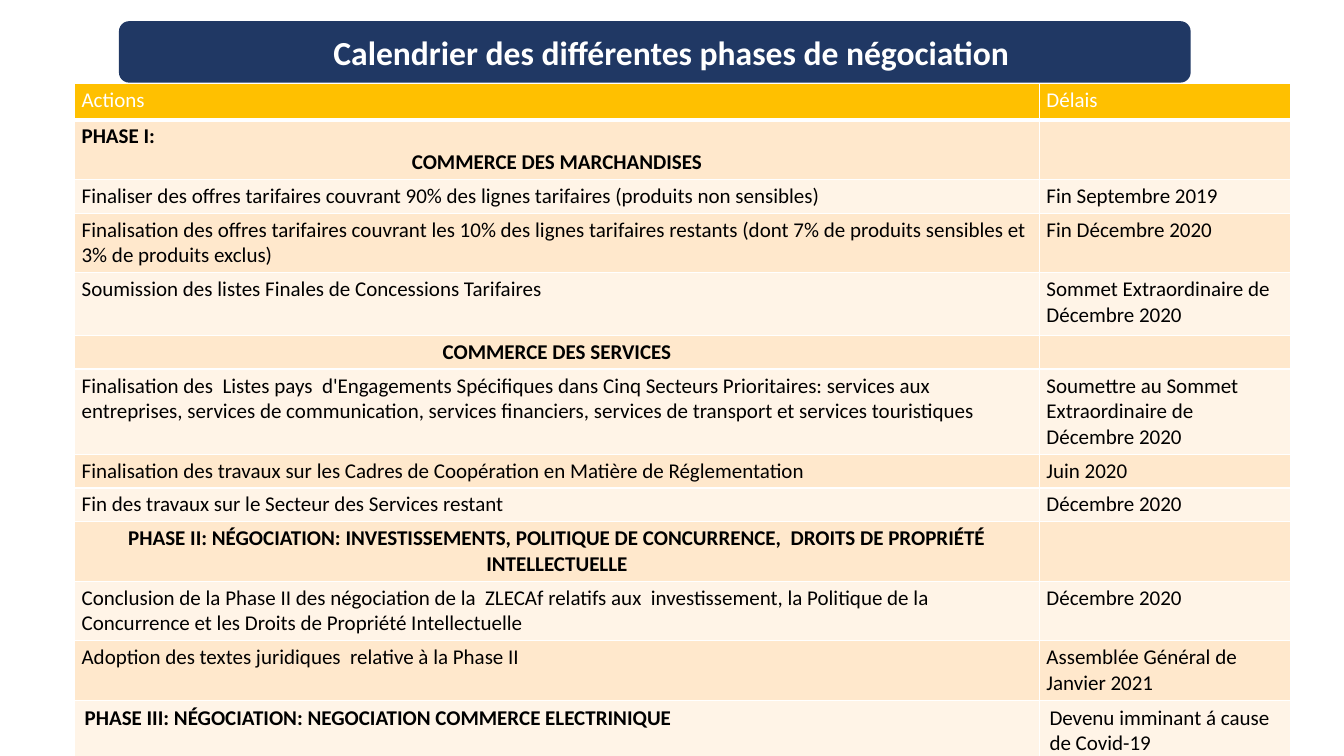
"""Build the slide with the calendar of the negotiation phases."""
from lxml import etree
from pptx import Presentation, util as u
from pptx.dml.color import RGBColor
from pptx.enum import shapes, text
from pptx.oxml import ns

NAVY = RGBColor(0x20, 0x38, 0x64)
GOLD = RGBColor(0xFF, 0xC0, 0x00)
PEACH = RGBColor(0xFF, 0xE8, 0xCC)
CREAM = RGBColor(0xFF, 0xF4, 0xE7)
WHITE = RGBColor(0xFF, 0xFF, 0xFF)
BLACK = RGBColor(0, 0, 0)
LEFT, CENTER = text.PP_ALIGN.LEFT, text.PP_ALIGN.CENTER

HEADING = "Calendrier des différentes phases de négociation"
BANNER_BOX = (8.85, 2.8, 79.74, 8.13)
TABLE_CORNER = (5.55, 11.07)
COLUMN_SHARES = (71.79, 18.68)

CALENDAR = [
    (4.8, "Actions", "Délais"),
    (6.8, "PHASE I:\nCOMMERCE DES MARCHANDISES", ""),
    (4, "Finaliser des offres tarifaires couvrant 90% des lignes tarifaires (produits non sensibles)",
     "Fin Septembre 2019"),
    (6.27, "Finalisation des offres tarifaires couvrant les 10% des lignes tarifaires restants "
     "(dont 7% de produits sensibles et 3% de produits exclus)", "Fin Décembre 2020"),
    (8.27, "Soumission des listes Finales de Concessions Tarifaires",
     "Sommet Extraordinaire de Décembre 2020"),
    (4, "COMMERCE DES SERVICES", ""),
    (10.8, "Finalisation des  Listes pays  d'Engagements Spécifiques dans Cinq Secteurs Prioritaires: "
     "services aux entreprises, services de communication, services financiers, "
     "services de transport et services touristiques",
     "Soumettre au Sommet Extraordinaire de Décembre 2020"),
    (4, "Finalisation des travaux sur les Cadres de Coopération en Matière de Réglementation",
     "Juin 2020"),
    (4, "Fin des travaux sur le Secteur des Services restant", "Décembre 2020"),
    (6.13, "PHASE II: NÉGOCIATION: INVESTISSEMENTS, POLITIQUE DE CONCURRENCE,  "
     "DROITS DE PROPRIÉTÉ INTELLECTUELLE", ""),
    (6.8, "Conclusion de la Phase II des négociation de la  ZLECAf relatifs aux  investissement, "
     "la Politique de la Concurrence et les Droits de Propriété Intellectuelle", "Décembre 2020"),
    (6.27, "Adoption des textes juridiques  relative à la Phase II",
     "Assemblée Général de Janvier 2021"),
    (7.2, "PHASE III: NÉGOCIATION: NEGOCIATION COMMERCE ELECTRINIQUE",
     "Devenu imminant á cause de Covid-19"),
]


def write(paragraph, words, *, font="Calibri", size=15, color=BLACK, bold=False, align=LEFT):
    """Write words into a paragraph, or set its size when there are none."""
    paragraph.alignment = align
    if not words:
        etree.SubElement(paragraph._p, ns.qn("a:endParaRPr"), sz=str(size * 100))
        return
    run = paragraph.add_run()
    run.text = words
    run.font.name, run.font.size, run.font.bold = font, u.Pt(size), bold
    run.font.color.rgb = color


def set_margins(target, left, top, right, bottom):
    """Set the inner margins of a cell or text frame in inches."""
    target.margin_left, target.margin_top = u.Inches(left), u.Inches(top)
    target.margin_right, target.margin_bottom = u.Inches(right), u.Inches(bottom)


def set_borders(cell, color, bottom):
    """Draw the four borders of a cell, with its own width for the bottom one."""
    properties = cell._tc.get_or_add_tcPr()
    widths = {"lnL": 1, "lnR": 1, "lnT": 1, "lnB": bottom}
    for position, (side, width) in enumerate(widths.items()):
        line = etree.Element(ns.qn(f"a:{side}"), w=str(u.Pt(width)))
        fill = etree.SubElement(line, ns.qn("a:solidFill"))
        etree.SubElement(fill, ns.qn("a:srgbClr"), val=str(color))
        properties.insert(position, line)


class CalendarSlide:
    """Hold the style and the current slide, with lengths in percent of its size."""

    def __init__(self, deck):
        """Add a slide that has only a title."""
        self.deck = deck
        self.slide = deck.slides.add_slide(deck.slide_layouts[5])

    def across(self, share):
        """Return a share of the slide's width."""
        return int(self.deck.slide_width * share / 100)

    def down(self, share):
        """Return a share of the slide's height."""
        return int(self.deck.slide_height * share / 100)

    def banner(self, box):
        """Draw the rounded band behind the title and put the title in front."""
        left, top, width, height = box
        place = self.across(left), self.down(top), self.across(width), self.down(height)
        band = self.slide.shapes.add_shape(shapes.MSO_SHAPE.ROUNDED_RECTANGLE, *place)
        band.shadow.inherit = False
        band.fill.solid()
        band.fill.fore_color.rgb = NAVY
        band.line.fill.background()
        heading = self.slide.shapes.title
        heading.left, heading.top, heading.width, heading.height = place
        frame = heading.text_frame
        frame.word_wrap, frame.auto_size = True, text.MSO_AUTO_SIZE.NONE
        frame.vertical_anchor = text.MSO_ANCHOR.MIDDLE
        set_margins(frame, 0.43, 0.07, 0.1, 0.07)
        write(frame.paragraphs[0], HEADING, size=24, color=WHITE, bold=True, align=CENTER)
        band._element.addnext(heading._element)

    def calendar(self, corner, columns, rows):
        """Add the table of actions and deadlines."""
        table = self.slide.shapes.add_table(
            len(rows), len(columns), self.across(corner[0]), self.down(corner[1]),
            self.across(sum(columns)), self.down(sum(row[0] for row in rows))).table
        for column, share in zip(table.columns, columns):
            column.width = self.across(share)
        for index, (share, *entries) in enumerate(rows):
            table.rows[index].height = self.down(share)
            for column, entry in enumerate(entries):
                self.entry(table.cell(index, column), entry, header=index == 0,
                           fill=GOLD if index == 0 else PEACH if index % 2 else CREAM,
                           section=entry.isupper() or "\n" in entry,
                           last=index == len(rows) - 1)

    def entry(self, cell, words, *, header, fill, section, last):
        """Fill one cell, with section names in bold."""
        cell.fill.solid()
        cell.fill.fore_color.rgb = fill
        set_borders(cell, WHITE, 3 if header else 1)
        set_margins(cell, *((0.1, 0.05) if last else (0.07, 0.04)) * 2)
        lines = words.split("\n")
        for number, line in enumerate(lines):
            paragraph = cell.text_frame.add_paragraph() if number else cell.text_frame.paragraphs[0]
            centered = section and not last and number == len(lines) - 1
            write(paragraph, line, color=WHITE if header else BLACK, bold=section,
                  align=CENTER if centered else LEFT)


def main():
    """Build and save the presentation."""
    deck = Presentation()
    deck.slide_width, deck.slide_height = u.Inches(13.33), u.Inches(7.5)
    page = CalendarSlide(deck)
    page.calendar(TABLE_CORNER, COLUMN_SHARES, CALENDAR)
    page.banner(BANNER_BOX)
    deck.save("out.pptx")


if __name__ == "__main__":
    main()
